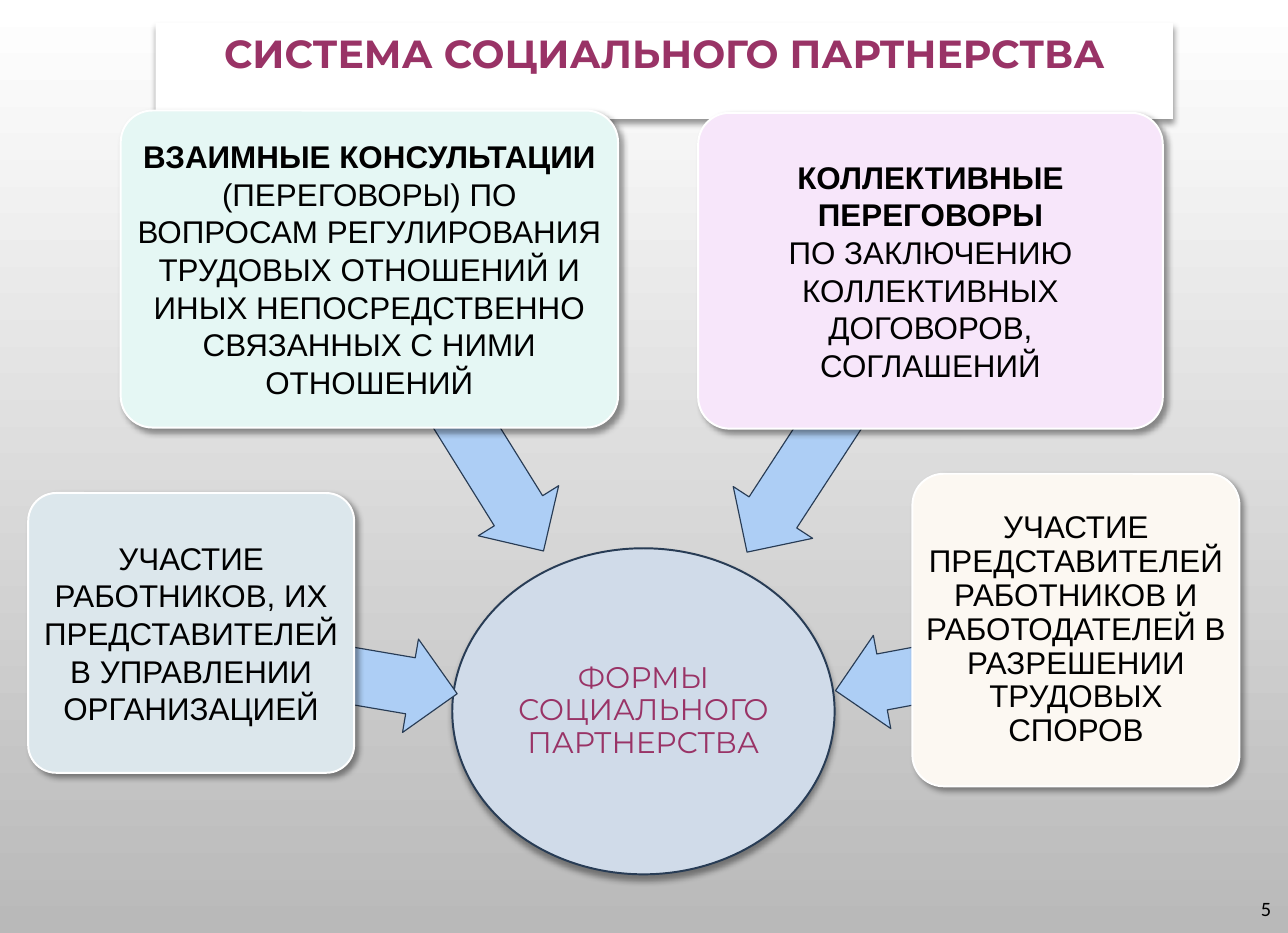
import pptx
import pptx.dml.color
import pptx.enum.shapes
import pptx.enum.text
import pptx.oxml.ns
import pptx.util
from lxml import etree

RGB = pptx.dml.color.RGBColor
Pt = pptx.util.Pt
MSO_SHAPE = pptx.enum.shapes.MSO_SHAPE
ALIGN = pptx.enum.text.PP_ALIGN
ANCHOR = pptx.enum.text.MSO_ANCHOR
qn = pptx.oxml.ns.qn

PX = 9144  # EMU in one px, 100 px to the inch

WHITE = RGB(0xFF, 0xFF, 0xFF)
BLACK = RGB(0, 0, 0)
GREY = RGB(0xB9, 0xB9, 0xB9)
PLUM = RGB(0x99, 0x33, 0x66)
NAVY = RGB(0x28, 0x3C, 0x55)
ARROW_BLUE = RGB(0xAD, 0xCE, 0xF5)
CENTRE_BLUE = RGB(0xD0, 0xDB, 0xE9)
MINT = RGB(0xE5, 0xF7, 0xF4)
LILAC = RGB(0xF7, 0xE6, 0xFA)
MIST = RGB(0xDC, 0xE7, 0xEC)
CREAM = RGB(0xFC, 0xF8, 0xF2)

# Each form: arrow place and rotation, card place, colour, spread (90 % lines), paragraphs of (text, bold)
FORMS = [
    ((182, 554, 225, 84), 189.7, (25, 437, 289, 248), MIST, False, [
        [("УЧАСТИЕ РАБОТНИКОВ, ИХ ПРЕДСТАВИТЕЛЕЙ", False)],
        [("В УПРАВЛЕНИИ ОРГАНИЗАЦИЕЙ", False)]]),
    ((258, 322, 293, 84), 238.1, (107, 98, 441, 281), MINT, False, [
        [("ВЗАИМНЫЕ КОНСУЛЬТАЦИИ ", True),
         ("(ПЕРЕГОВОРЫ) ПО ВОПРОСАМ РЕГУЛИРОВАНИЯ ТРУДОВЫХ ОТНОШЕНИЙ И ИНЫХ "
          "НЕПОСРЕДСТВЕННО СВЯЗАННЫХ С НИМИ ОТНОШЕНИЙ", False)]]),
    ((595, 323, 297, 84), 303.1, (619, 100, 412, 280), LILAC, False, [
        [("КОЛЛЕКТИВНЫЕ ПЕРЕГОВОРЫ", True)],
        [("ПО ЗАКЛЮЧЕНИЮ", False)],
        [("КОЛЛЕКТИВНЫХ ДОГОВОРОВ,", False)],
        [("СОГЛАШЕНИЙ", False)]]),
    ((739, 551, 209, 84), 349.4, (809, 420, 290, 277), CREAM, True, [
        [("УЧАСТИЕ ПРЕДСТАВИТЕЛЕЙ РАБОТНИКОВ И РАБОТОДАТЕЛЕЙ В РАЗРЕШЕНИИ "
          "ТРУДОВЫХ СПОРОВ", False)]]),
]


def px(*lengths):
    return [n * PX for n in lengths]


def write(sp, paragraphs, font="Arial", size=20, color=BLACK, align=ALIGN.CENTER,
          anchor=ANCHOR.MIDDLE, insets=(4, 4), spread=False):
    """Fill a shape with paragraphs, each a list of (text, bold) runs."""
    tf = sp.text_frame
    tf.word_wrap = True
    tf.vertical_anchor = anchor
    tf.margin_left = tf.margin_right = insets[0] * PX
    tf.margin_top = tf.margin_bottom = insets[1] * PX
    for i, runs in enumerate(paragraphs):
        p = tf.add_paragraph() if i else tf.paragraphs[0]
        p.alignment = align
        if spread:
            p.line_spacing = 0.9
            p.space_after = Pt(7)
        for text, bold in runs:
            r = p.add_run()
            r.text = text
            r.font.name, r.font.size, r.font.bold = font, Pt(size), bold
            r.font.color.rgb = color


def add_shadow(sp, angle):
    sp.shadow.inherit = False
    effects = sp._element.spPr.find(qn("a:effectLst"))
    shadow = etree.SubElement(effects, qn("a:outerShdw"), blurRad=str(Pt(4)), dist=str(Pt(3)),
                              dir=str(angle * 60000), rotWithShape="0")
    color = etree.SubElement(shadow, qn("a:srgbClr"), val=str(BLACK))
    etree.SubElement(color, qn("a:alpha"), val="40000")


def add_figure(slide, kind, place, fill, line, width, adjustments=()):
    sp = slide.shapes.add_shape(kind, *px(*place))
    for i, value in enumerate(adjustments):
        sp.adjustments[i] = value
    sp.shadow.inherit = False
    sp.fill.solid()
    sp.fill.fore_color.rgb = fill
    sp.line.color.rgb = line
    sp.line.width = Pt(width)
    return sp


def add_arrow(slide, place, rotation):
    sp = add_figure(slide, MSO_SHAPE.LEFT_ARROW, place, ARROW_BLUE, NAVY, 0.75, (0.6, 0.5))
    sp.rotation = rotation


def add_card(slide, place, fill, spread, paragraphs):
    sp = add_figure(slide, MSO_SHAPE.ROUNDED_RECTANGLE, place, fill, WHITE, 1.25, (0.1,))
    add_shadow(sp, 45)
    write(sp, paragraphs, spread=spread)


def add_centre(slide):
    sp = add_figure(slide, MSO_SHAPE.OVAL, (401, 486, 339, 289), CENTRE_BLUE, NAVY, 1.25)
    add_shadow(sp, 90)
    write(sp, [[("ФОРМЫ СОЦИАЛЬНОГО ПАРТНЕРСТВА", False)]], font="Montserrat", size=19,
          color=PLUM, insets=(1, 1), spread=True)


def format_title(slide):
    sp = slide.shapes.title
    sp.left, sp.top, sp.width, sp.height = px(138, 20, 902, 55)
    sp.fill.solid()
    sp.fill.fore_color.rgb = WHITE
    add_shadow(sp, 90)
    write(sp, [[("СИСТЕМА СОЦИАЛЬНОГО ПАРТНЕРСТВА", True)]], font="Montserrat", size=25,
          color=PLUM, anchor=ANCHOR.TOP, insets=(13, 6))
    sp.text_frame.auto_size = pptx.enum.text.MSO_AUTO_SIZE.SHAPE_TO_FIT_TEXT


def add_page_number(slide):
    sp = slide.shapes.add_textbox(*px(1068, 783, 72, 44))
    write(sp, [[("5", False)]], font="Calibri", size=13, align=ALIGN.RIGHT, insets=(13, 6))


def paint_background(slide):
    fill = slide.background.fill
    fill.gradient()
    fill.gradient_angle = 270
    for stop, color in zip(fill.gradient_stops, (WHITE, GREY)):
        stop.color.rgb = color


def main():
    prs = pptx.Presentation()
    prs.slide_width, prs.slide_height = px(1142, 827)
    slide = prs.slides.add_slide(prs.slide_layouts[5])
    paint_background(slide)
    format_title(slide)
    add_page_number(slide)
    add_centre(slide)
    for arrow, rotation, card, fill, spread, paragraphs in FORMS:
        add_arrow(slide, arrow, rotation)
        add_card(slide, card, fill, spread, paragraphs)
    prs.save("out.pptx")


if __name__ == "__main__":
    main()
